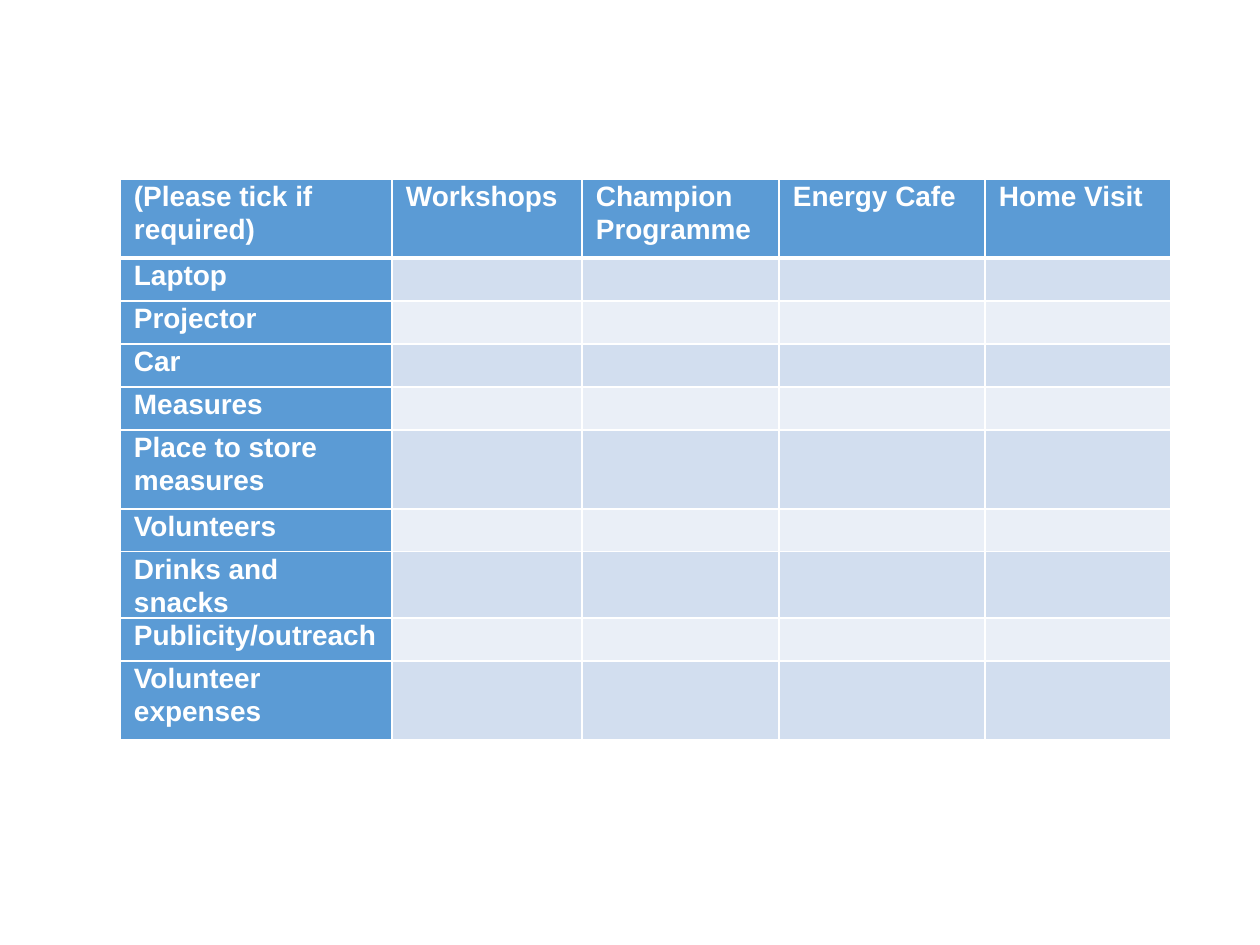
from dataclasses import dataclass

from lxml import etree
from pptx import Presentation
from pptx.dml.color import RGBColor
from pptx.enum.text import MSO_ANCHOR
from pptx.oxml.ns import qn
from pptx.util import Emu, Pt

TOP = MSO_ANCHOR.TOP
SCALE = 914400 / 126


@dataclass(frozen=True)
class Theme:
    font: str = "Arial"
    size: int = 16
    white: str = "FFFFFF"
    blue: str = "5B9BD5"
    bands: tuple[str, str] = ("D2DEEF", "EAEFF7")
    thin: int = 1
    thick: int = 3


@dataclass(frozen=True)
class Need:
    label: str
    height: int = 43


@dataclass(frozen=True)
class Column:
    label: str
    width: int


THEME = Theme()
HEAD_HEIGHT = 79
COLUMNS = [
    Column("(Please tick if required)", 272),
    Column("Workshops", 190),
    Column("Champion Programme", 197),
    Column("Energy Cafe", 206),
    Column("Home Visit", 186),
]
NEEDS = [
    Need("Laptop"),
    Need("Projector"),
    Need("Car"),
    Need("Measures"),
    Need("Place to store measures", 79),
    Need("Volunteers"),
    Need("Drinks and snacks"),
    Need("Publicity/outreach"),
    Need("Volunteer expenses", 79),
]


def px(count: int) -> Emu:
    return Emu(round(count * SCALE))


def add_rules(cell, top: int, bottom: int) -> None:
    """Draw white cell borders, placed before the fill as the schema asks."""
    widths = {"a:lnL": THEME.thin, "a:lnR": THEME.thin, "a:lnT": top, "a:lnB": bottom}
    props = cell._tc.get_or_add_tcPr()
    for spot, (tag, width) in enumerate(widths.items()):
        line = etree.Element(qn(tag), w=str(Pt(width)))
        fill = etree.SubElement(line, qn("a:solidFill"))
        etree.SubElement(fill, qn("a:srgbClr"), val=THEME.white)
        props.insert(spot, line)


def style_cell(cell, color: str, row: int) -> None:
    cell.fill.solid()
    cell.fill.fore_color.rgb = RGBColor.from_string(color)
    cell.margin_left = cell.margin_right = px(14)
    cell.margin_top = cell.margin_bottom = 0
    cell.vertical_anchor = TOP
    add_rules(
        cell,
        top=THEME.thick if row == 1 else THEME.thin,
        bottom=THEME.thick if row == 0 else THEME.thin,
    )


def write_label(cell, text: str) -> None:
    para = cell.text_frame.paragraphs[0]
    para.line_spacing = 1.07
    para.space_after = Pt(8)
    run = para.add_run()
    run.text = text
    run.font.name = THEME.font
    run.font.size = Pt(THEME.size)
    run.font.bold = True
    run.font.color.rgb = RGBColor.from_string(THEME.white)


def add_grid(slide, left: int, top: int) -> None:
    heights = [HEAD_HEIGHT] + [need.height for need in NEEDS]
    width = sum(column.width for column in COLUMNS)
    table = slide.shapes.add_table(
        len(heights), len(COLUMNS), px(left), px(top), px(width), px(sum(heights))
    ).table
    table.first_col = True
    for col, column in enumerate(COLUMNS):
        table.columns[col].width = px(column.width)
    for row, height in enumerate(heights):
        table.rows[row].height = px(height)
        for col, column in enumerate(COLUMNS):
            cell = table.cell(row, col)
            if row == 0 or col == 0:
                style_cell(cell, THEME.blue, row)
                write_label(cell, NEEDS[row - 1].label if row else column.label)
            else:
                style_cell(cell, THEME.bands[(row - 1) % 2], row)


def main() -> None:
    deck = Presentation()
    deck.slide_width, deck.slide_height = px(1260), px(945)
    slide = deck.slides.add_slide(deck.slide_layouts[6])
    add_grid(slide, left=120, top=179)
    deck.save("out.pptx")


if __name__ == "__main__":
    main()
